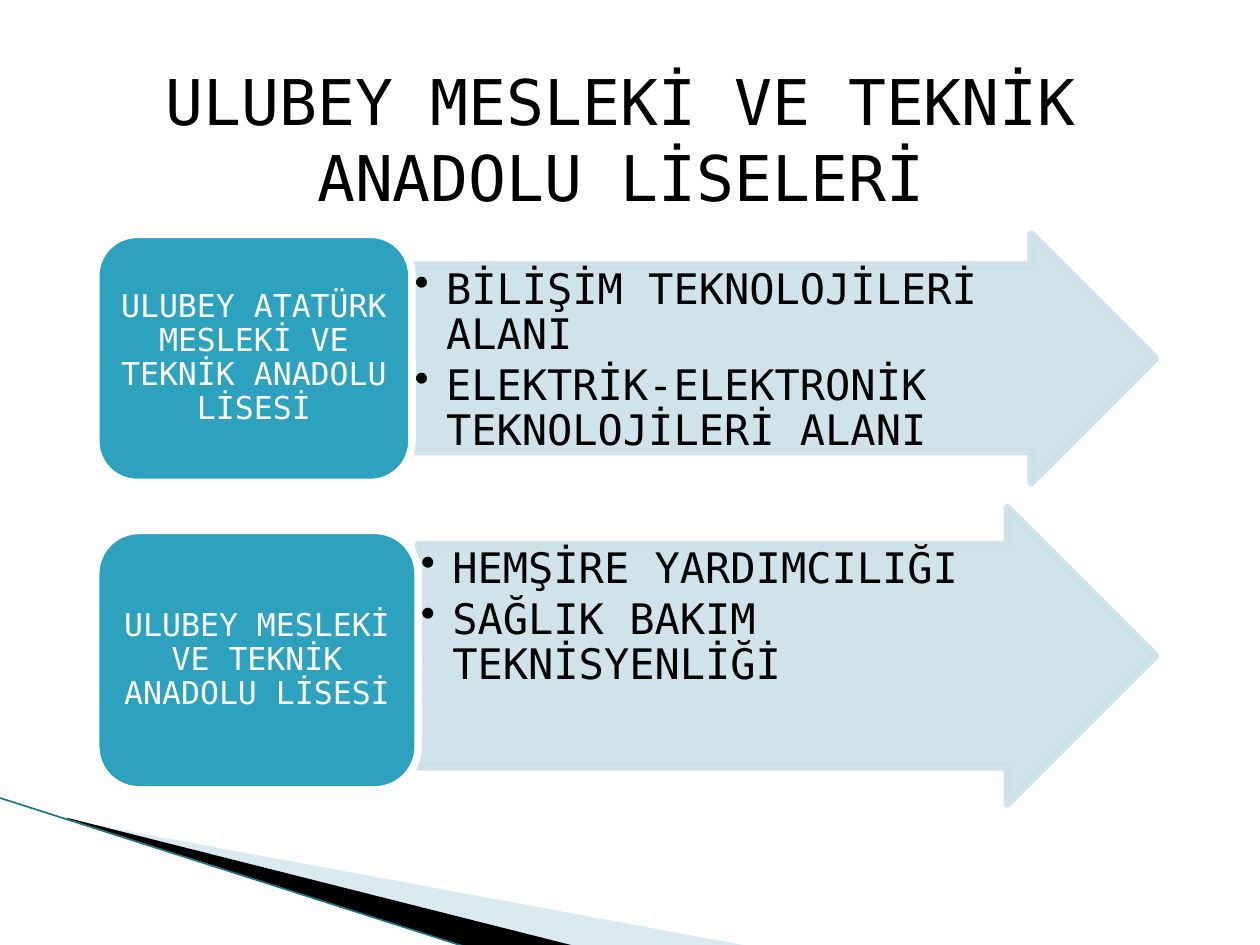
"""Build a slide listing the fields taught at two vocational high schools."""
from dataclasses import dataclass

from lxml import etree
from pptx import Presentation
from pptx.dml.color import RGBColor
from pptx.enum.shapes import MSO_CONNECTOR, MSO_SHAPE
from pptx.enum.text import MSO_ANCHOR, PP_ALIGN
from pptx.oxml.ns import qn
from pptx.util import Inches, Pt

ARROW, CARD = MSO_SHAPE.RIGHT_ARROW, MSO_SHAPE.ROUNDED_RECTANGLE
STRAIGHT = MSO_CONNECTOR.STRAIGHT
TOP, MIDDLE = MSO_ANCHOR.TOP, MSO_ANCHOR.MIDDLE
LEFT, CENTER = PP_ALIGN.LEFT, PP_ALIGN.CENTER


@dataclass(frozen=True)
class Theme:
    font: str = "DejaVu Sans Mono"
    black: str = "000000"
    white: str = "FFFFFF"
    card: str = "2DA2BF"
    arrow: str = "CDE0E8"
    wedge: str = "A0CBDC"
    rule: str = "1B7587"
    title_size: int = 36
    field_size: int = 24
    school_size: int = 18
    outline: float = 4.33


THEME = Theme()

SCHOOLS = [
    ("ULUBEY ATATÜRK MESLEKİ VE TEKNİK ANADOLU LİSESİ",
     ["BİLİŞİM TEKNOLOJİLERİ ALANI",
      "ELEKTRİK-ELEKTRONİK TEKNOLOJİLERİ ALANI"],
     (0.76, 1.86, 2.51, 1.97), (3.27, 1.86, 5.9, 1.97)),
    ("ULUBEY MESLEKİ VE TEKNİK ANADOLU LİSESİ",
     ["HEMŞİRE YARDIMCILIĞI", "SAĞLIK BAKIM TEKNİSYENLİĞİ"],
     (0.76, 4.21, 2.56, 2.06), (3.32, 4.03, 5.85, 2.35)),
]


def rgb(value):
    return RGBColor.from_string(value)


def set_opacity(sp, percent):
    for color in sp._element.spPr.iter(qn("a:srgbClr")):
        etree.SubElement(color, qn("a:alpha"), val=str(percent * 1000))


def add_bullet(p, indent):
    pPr = p._p.get_or_add_pPr()
    pPr.set("marL", str(Inches(indent)))
    pPr.set("indent", str(-Inches(indent)))
    etree.SubElement(pPr, qn("a:buChar"), char="•")


def write_text(sp, paragraphs, size, color, align=CENTER, anchor=MIDDLE,
               insets=(0.1, 0.05), spacing=None, after=0, bullet_indent=None):
    tf = sp.text_frame
    tf.word_wrap = True
    tf.vertical_anchor = anchor
    tf.margin_left = tf.margin_right = Inches(insets[0])
    tf.margin_top = tf.margin_bottom = Inches(insets[1])
    for i, text in enumerate(paragraphs):
        p = tf.add_paragraph() if i else tf.paragraphs[0]
        if bullet_indent:
            add_bullet(p, bullet_indent)
        p.alignment = align
        p.line_spacing = spacing
        p.space_after = Pt(after)
        r = p.add_run()
        r.text = text
        r.font.name = THEME.font
        r.font.size = Pt(size)
        r.font.color.rgb = rgb(color)


def add_block(slide, kind, box, fill, line):
    sp = slide.shapes.add_shape(kind, *map(Inches, box))
    sp.shadow.inherit = False
    sp.fill.solid()
    sp.fill.fore_color.rgb = rgb(fill)
    sp.line.color.rgb = rgb(line)
    sp.line.width = Pt(THEME.outline)
    etree.SubElement(sp.line._get_or_add_ln(), qn("a:round"))
    return sp


def add_wedge(slide, points, color, opacity=100):
    start, *rest = [tuple(map(Inches, point)) for point in points]
    builder = slide.shapes.build_freeform(*start)
    builder.add_line_segments(rest, close=True)
    sp = builder.convert_to_shape()
    sp.shadow.inherit = False
    sp.fill.solid()
    sp.fill.fore_color.rgb = rgb(color)
    sp.line.fill.background()
    if opacity < 100:
        set_opacity(sp, opacity)


def add_rule(slide, start, end, color, width):
    line = slide.shapes.add_connector(STRAIGHT, *map(Inches, start + end))
    line.line.color.rgb = rgb(color)
    line.line.width = Pt(width)
    etree.SubElement(line._element.spPr, qn("a:effectLst"))


def add_corner(slide):
    add_wedge(slide, [(0.55, 6.51), (5.95, 7.51), (4.56, 7.51), (0.55, 6.5)],
              THEME.wedge, opacity=40)
    add_wedge(slide, [(0.53, 6.49), (4.57, 7.51), (3.72, 7.52), (0.54, 6.5)],
              THEME.black)
    add_rule(slide, (-0.01, 6.33), (3.71, 7.52), THEME.rule, 0.95)


def add_school(slide, school, fields, card_box, arrow_box):
    arrow = add_block(slide, ARROW, arrow_box, THEME.arrow, THEME.arrow)
    arrow.adjustments[0] = 0.75
    arrow.adjustments[1] = 0.5
    set_opacity(arrow, 90)
    write_text(arrow, fields, THEME.field_size, THEME.black, align=LEFT,
               anchor=TOP, insets=(0.02, 0.02), spacing=0.9, after=3,
               bullet_indent=0.25)
    card = add_block(slide, CARD, card_box, THEME.card, THEME.white)
    write_text(card, [school], THEME.school_size, THEME.white,
               insets=(0.07, 0.04), spacing=0.9)


def main():
    prs = Presentation()
    prs.slide_width, prs.slide_height = Inches(10), Inches(7.5)
    slide = prs.slides.add_slide(prs.slide_layouts[6])
    add_corner(slide)
    for school in SCHOOLS:
        add_school(slide, *school)
    title = slide.shapes.add_textbox(*map(Inches, (0.75, 0.44, 8.35, 1.31)))
    write_text(title, ["ULUBEY MESLEKİ VE TEKNİK ANADOLU LİSELERİ"],
               THEME.title_size, THEME.black)
    prs.save("out.pptx")


if __name__ == "__main__":
    main()
